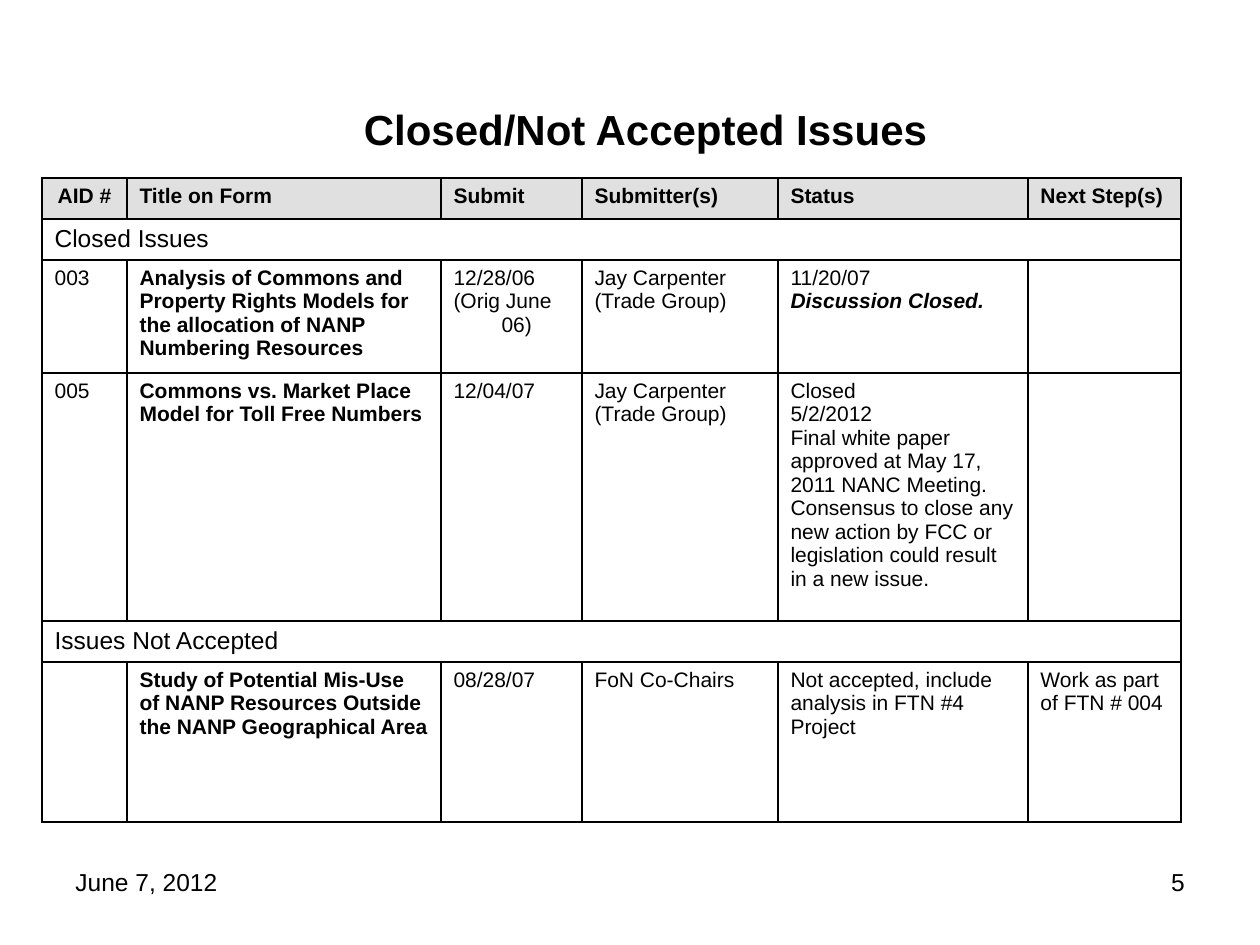
from lxml import etree
from pptx import Presentation
from pptx.dml.color import RGBColor
from pptx.enum.text import MSO_ANCHOR, PP_ALIGN
from pptx.oxml.ns import qn
from pptx.util import Pt

PX = 914400 / 126
LEFT, CENTER, RIGHT = PP_ALIGN.LEFT, PP_ALIGN.CENTER, PP_ALIGN.RIGHT
MIDDLE = MSO_ANCHOR.MIDDLE
BLACK, WHITE, GREY = "000000", "FFFFFF", "E0E0E0"
HANG = 48

COLS = [85, 314, 141, 196, 250, 153]
ROW_HEIGHTS = [41, 41, 113, 248, 41, 160]
HEADER = ["AID #", "Title on Form", "Submit", "Submitter(s)", "Status", "Next Step(s)"]
HANGING_COLS = (0, 2, 3)
# A one-item row is a section heading across the table
ROWS = [
    ["Closed Issues"],
    ["003",
     "Analysis of Commons and Property Rights Models for the allocation of NANP "
     "Numbering Resources",
     "12/28/06\n(Orig June 06)", "Jay Carpenter\n(Trade Group)",
     "11/20/07\nDiscussion Closed.", ""],
    ["005", "Commons vs. Market Place Model for Toll Free Numbers",
     "12/04/07", "Jay Carpenter\n(Trade Group)",
     "Closed\n5/2/2012\nFinal white paper approved at May 17, 2011 NANC Meeting. "
     "Consensus to close any new action by FCC or legislation could result in a new issue.",
     ""],
    ["Issues Not Accepted"],
    ["",
     "Study of Potential Mis-Use of NANP Resources Outside the NANP Geographical Area",
     "08/28/07", "FoN Co-Chairs",
     "Not accepted, include analysis in FTN #4 Project", "Work as part of FTN # 004"],
]


def px(n):
    return round(n * PX)


def rgb(color):
    return RGBColor.from_string(color)


def write(tf, text, size=12, bold=False, align=LEFT, hang=0):
    """Write one paragraph per line of text."""
    tf.word_wrap = True
    for i, line in enumerate(text.split("\n")):
        p = tf.add_paragraph() if i else tf.paragraphs[0]
        p.alignment = align
        if hang:
            pPr = p._p.get_or_add_pPr()
            pPr.set("marL", str(px(hang)))
            pPr.set("indent", str(-px(hang)))
        font = p.font
        if line:
            r = p.add_run()
            r.text = line
            font = r.font
        font.name, font.size, font.bold = "Arial", Pt(size), bold
        font.color.rgb = rgb(BLACK)


def add_borders(cell, color=BLACK, width=1):
    tcPr = cell._tc.get_or_add_tcPr()
    for i, side in enumerate(("a:lnL", "a:lnR", "a:lnT", "a:lnB")):
        ln = etree.Element(qn(side), w=str(Pt(width)))
        fill = etree.SubElement(ln, qn("a:solidFill"))
        etree.SubElement(fill, qn("a:srgbClr"), val=color)
        tcPr.insert(i, ln)


def add_title(s, text, x, y, w, h):
    sp = s.shapes.title
    sp.left, sp.top, sp.width, sp.height = map(px, (x, y, w, h))
    sp.text_frame.vertical_anchor = MIDDLE
    write(sp.text_frame, text, size=24, bold=True, align=CENTER)


def add_issue_table(s, x, y):
    shape = s.shapes.add_table(len(ROW_HEIGHTS), len(COLS), px(x), px(y),
                               px(sum(COLS)), px(sum(ROW_HEIGHTS)))
    table = shape.table
    for col, w in zip(table.columns, COLS):
        col.width = px(w)
    for row, h in zip(table.rows, ROW_HEIGHTS):
        row.height = px(h)

    # Fill and grid lines
    for r, row in enumerate(table.rows):
        for cell in row.cells:
            cell.fill.solid()
            cell.fill.fore_color.rgb = rgb(WHITE if r else GREY)
            add_borders(cell)

    # Column headings
    for c, text in enumerate(HEADER):
        write(table.cell(0, c).text_frame, text, bold=True, hang=HANG,
              align=LEFT if c else CENTER)

    # Sections and issues
    for r, texts in enumerate(ROWS, 1):
        if len(texts) == 1:
            table.cell(r, 0).merge(table.cell(r, len(COLS) - 1))
            write(table.cell(r, 0).text_frame, texts[0], size=14)
            continue
        for c, text in enumerate(texts):
            write(table.cell(r, c).text_frame, text, bold=c == 1,
                  hang=HANG if c in HANGING_COLS else 0)

    # Closing remark of issue 003
    remark = table.cell(2, 4).text_frame.paragraphs[1].runs[0].font
    remark.bold = remark.italic = True


def add_footer(s, x, y, w, h):
    box_w = 294
    for text, left, align in (("June 7, 2012", x, LEFT), ("5", x + w - box_w, RIGHT)):
        sp = s.shapes.add_textbox(px(left), px(y), px(box_w), px(h))
        write(sp.text_frame, text, size=14, align=align)


def main():
    prs = Presentation()
    prs.slide_width, prs.slide_height = px(1260), px(945)
    s = prs.slides.add_slide(prs.slide_layouts[5])
    add_title(s, "Closed/Not Accepted Issues", 63, 85, 1165, 88)
    add_issue_table(s, 42, 178)
    add_footer(s, 63, 861, 1134, 65)
    prs.save("out.pptx")


if __name__ == "__main__":
    main()
